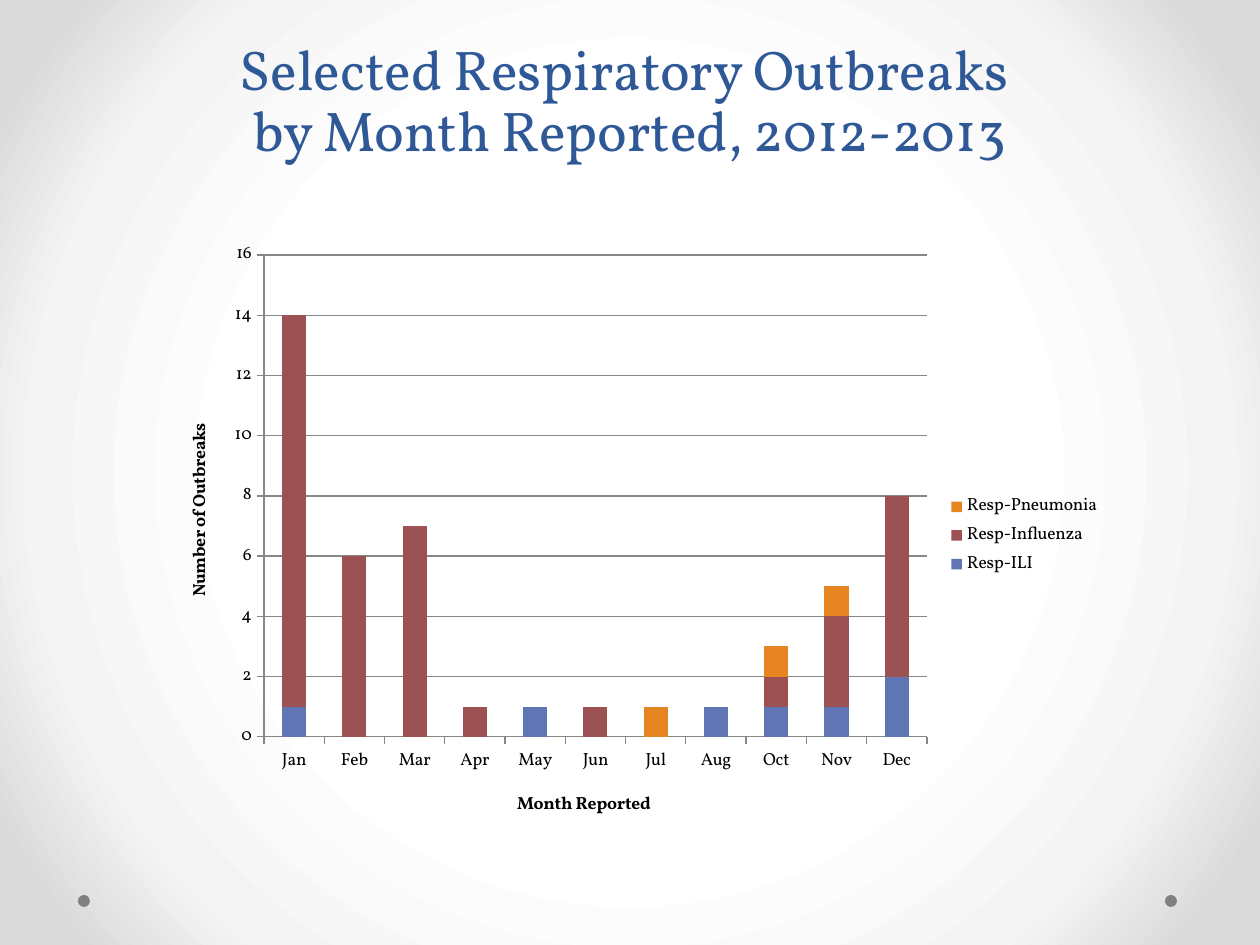
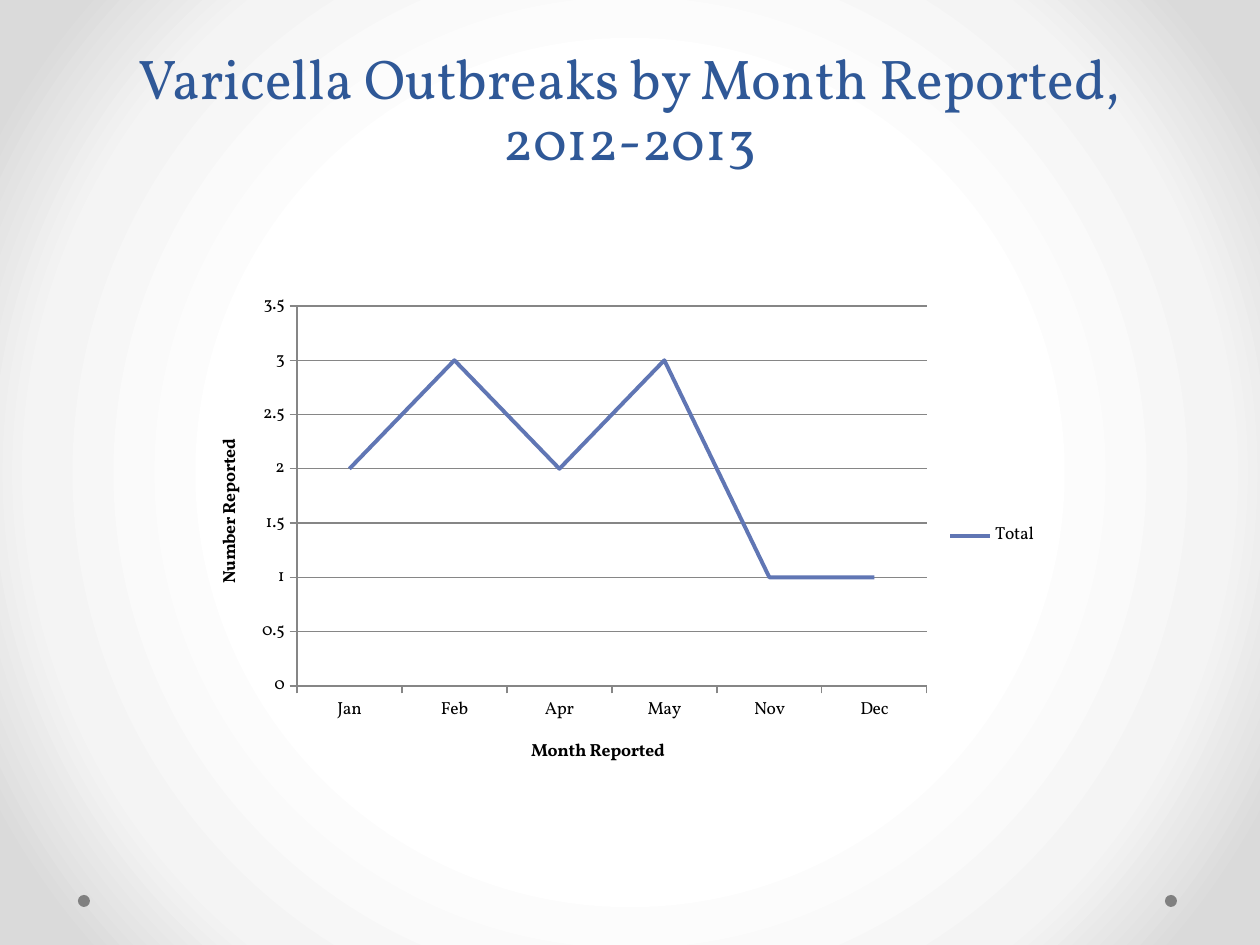
"""Build two slides that chart outbreaks by month reported."""
from pptx import Presentation
from pptx.chart.data import CategoryChartData
from pptx.dml.color import RGBColor
from pptx.enum.chart import XL_CHART_TYPE, XL_LEGEND_POSITION, XL_MARKER_STYLE, XL_TICK_MARK
from pptx.enum.shapes import MSO_SHAPE
from pptx.enum.text import MSO_ANCHOR, MSO_AUTO_SIZE, PP_ALIGN
from pptx.oxml import parse_xml
from pptx.oxml.ns import nsdecls, qn
from pptx.util import Pt

STACKED, LINE = XL_CHART_TYPE.COLUMN_STACKED, XL_CHART_TYPE.LINE
RIGHT = XL_LEGEND_POSITION.RIGHT
NO_MARKER = XL_MARKER_STYLE.NONE
OUTSIDE = XL_TICK_MARK.OUTSIDE
OVAL = MSO_SHAPE.OVAL
BOTTOM = MSO_ANCHOR.BOTTOM
NO_FIT = MSO_AUTO_SIZE.NONE
CENTER = PP_ALIGN.CENTER

PX = 914400 / 126
PAGE_WIDTH, PAGE_HEIGHT = 1260, 945
TITLE_ONLY = 5
FONT = "Vollkorn"
COLORS = {
    "title": "2F5897", "text": "000000", "dot": "808080", "rule": "868686",
    "ili": "6076B4", "influenza": "9C5252", "pneumonia": "E68422",
}
BACKDROP = [(50, "FFFFFF"), (76, "F4F4F4"), (92, "DADADA")]


def emu(*lengths):
    """Turn px lengths into EMU."""
    return [round(length * PX) for length in lengths]


def rgb(name):
    """Look up a named colour."""
    return RGBColor.from_string(COLORS[name])


def write_text(frame, text, size, color, bold=False, spacing=None):
    """Write one centred, formatted paragraph into a text frame."""
    para = frame.paragraphs[0]
    para.text = text
    para.alignment = CENTER
    if spacing:
        para.line_spacing = Pt(spacing)
    for span in para.runs:
        span.font.name = FONT
        span.font.size = Pt(size)
        span.font.bold = bold
        span.font.color.rgb = rgb(color)


def paint_backdrop(master):
    """Give the master a radial gradient background."""
    master.background.fill.solid()
    properties = master.element.find(".//" + qn("p:bgPr"))
    stops = "".join(
        f'<a:gs pos="{place * 1000}"><a:srgbClr val="{color}"/></a:gs>'
        for place, color in BACKDROP
    )
    gradient = parse_xml(
        f'<a:gradFill {nsdecls("a")} rotWithShape="1"><a:gsLst>{stops}</a:gsLst>'
        '<a:path path="circle"><a:fillToRect l="50000" t="50000" r="50000" b="50000"/>'
        "</a:path></a:gradFill>"
    )
    properties.replace(properties.find(qn("a:solidFill")), gradient)


def add_dots(page):
    """Draw the two footer dots."""
    for left in (78, 1165):
        dot = page.shapes.add_shape(OVAL, *emu(left, 895, 12, 12))
        dot.shadow.inherit = False
        dot.fill.solid()
        dot.fill.fore_color.rgb = rgb("dot")
        dot.line.fill.background()


def set_title(page, text, box):
    """Move and format the title placeholder."""
    title = page.shapes.title
    title.left, title.top, title.width, title.height = emu(*box)
    frame = title.text_frame
    frame.word_wrap = True
    frame.auto_size = NO_FIT
    frame.vertical_anchor = BOTTOM
    write_text(frame, text, size=32, color="title", spacing=35)


def place_part(parent, index, chart_box, left, top, width=None, height=None):
    """Fix a chart part at a px place relative to the chart box."""
    _, _, chart_width, chart_height = chart_box
    is_plot = width is not None
    parts = [("x", left / chart_width), ("y", top / chart_height)]
    if is_plot:
        parts += [("w", width / chart_width), ("h", height / chart_height)]
    target = '<c:layoutTarget val="inner"/>' if is_plot else ""
    modes = '<c:xMode val="edge"/><c:yMode val="edge"/>'
    values = "".join(f'<c:{key} val="{value:.4f}"/>' for key, value in parts)
    old = parent.find(qn("c:layout"))
    if old is not None:
        parent.remove(old)
    parent.insert(index, parse_xml(
        f'<c:layout {nsdecls("c")}><c:manualLayout>{target}{modes}{values}'
        "</c:manualLayout></c:layout>"
    ))


def style_axis(axis, title, title_place, chart_box):
    """Format an axis with its title and lines."""
    axis.major_tick_mark = OUTSIDE
    axis.format.line.color.rgb = rgb("rule")
    axis.format.line.width = Pt(0.75)
    write_text(axis.axis_title.text_frame, title, size=10, color="text", bold=True)
    place_part(axis.axis_title.element, 1, chart_box, *title_place)


def style_value_axis(axis, maximum, step):
    """Set the scale, gridlines and upright title of a value axis."""
    axis.minimum_scale, axis.maximum_scale, axis.major_unit = 0, maximum, step
    axis.has_major_gridlines = True
    axis.major_gridlines.format.line.color.rgb = rgb("rule")
    axis.major_gridlines.format.line.width = Pt(0.75)
    body = axis.axis_title.element.find(".//" + qn("a:bodyPr"))
    body.set("rot", "-5400000")
    body.set("vert", "horz")


def add_month_chart(page, kind, box, months, series, plot_box, value_title,
                    value_place, month_place, maximum, step):
    """Add a chart by month, with parts placed relative to its box."""
    data = CategoryChartData()
    data.categories = months
    for name, values, _ in series:
        data.add_series(name, values)
    chart = page.shapes.add_chart(kind, *emu(*box), data).chart
    chart.has_title = False
    chart.font.name = FONT
    chart.font.size = Pt(10)
    chart.font.color.rgb = rgb("text")
    chart.has_legend = True
    chart.legend.position = RIGHT
    chart.legend.include_in_layout = False
    style_axis(chart.category_axis, "Month Reported", month_place, box)
    style_axis(chart.value_axis, value_title, value_place, box)
    style_value_axis(chart.value_axis, maximum, step)
    place_part(chart.element.find(".//" + qn("c:plotArea")), 0, box, *plot_box)
    plot = chart.plots[0]
    plot.vary_by_categories = False
    if kind == STACKED:
        plot.gap_width, plot.overlap = 150, 100
    for item, (_, _, color) in zip(plot.series, series):
        if kind == LINE:
            item.smooth = False
            item.marker.style = NO_MARKER
            item.format.line.color.rgb = rgb(color)
            item.format.line.width = Pt(2.25)
        else:
            item.format.fill.solid()
            item.format.fill.fore_color.rgb = rgb(color)


def add_page(deck, title, title_box):
    """Add a titled slide with its footer dots."""
    page = deck.slides.add_slide(deck.slide_layouts[TITLE_ONLY])
    add_dots(page)
    set_title(page, title, title_box)
    return page


def build_respiratory(deck):
    """Build the slide on respiratory outbreaks."""
    page = add_page(deck, "Selected Respiratory Outbreaks \vby Month Reported, 2012-2013",
                    (63, 53, 1134, 116))
    add_month_chart(
        page, STACKED, (158, 231, 955, 609),
        months=["Jan", "Feb", "Mar", "Apr", "May", "Jun", "Jul", "Aug", "Oct", "Nov", "Dec"],
        series=[
            ("Resp-ILI", [1, None, None, None, 1, None, None, 1, 1, 1, 2], "ili"),
            ("Resp-Influenza", [13, 6, 7, 1, None, 1, None, None, 1, 3, 6], "influenza"),
            ("Resp-Pneumonia", [None] * 6 + [1, None, 1, 1, None], "pneumonia"),
        ],
        plot_box=(106, 24, 663, 482), value_title="Number of Outbreaks",
        value_place=(26, 189), month_place=(356, 557), maximum=16, step=2,
    )


def build_varicella(deck):
    """Build the slide on varicella outbreaks."""
    page = add_page(deck, "Varicella Outbreaks by Month Reported, 2012-2013",
                    (63, 73, 1134, 105))
    add_month_chart(
        page, LINE, (189, 284, 861, 504),
        months=["Jan", "Feb", "Apr", "May", "Nov", "Dec"],
        series=[("Total", [2, 3, 2, 3, 1, 1], "ili")],
        plot_box=(108, 22, 630, 380), value_title="Number Reported",
        value_place=(25, 152), month_place=(339, 451), maximum=3.5, step=0.5,
    )


def main():
    """Build and save the deck."""
    deck = Presentation()
    deck.slide_width, deck.slide_height = emu(PAGE_WIDTH, PAGE_HEIGHT)
    paint_backdrop(deck.slide_master)
    build_respiratory(deck)
    build_varicella(deck)
    deck.save("out.pptx")


if __name__ == "__main__":
    main()
